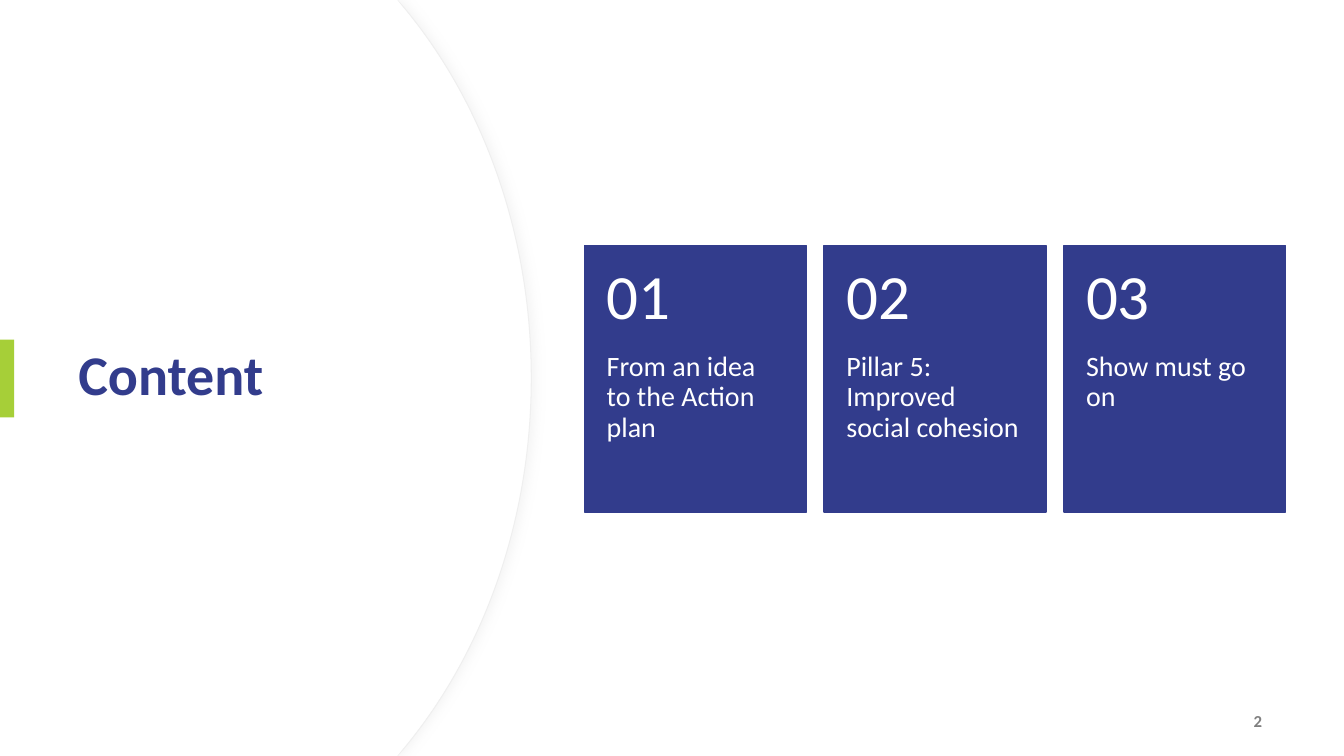
from lxml import etree
from pptx import Presentation
from pptx import util as u
from pptx.dml.color import RGBColor
from pptx.enum import shapes, text
from pptx.oxml import ns

Cm = u.Cm
FONT = "Calibri"
COLOURS = {
    "white": "FFFFFF",
    "navy": "323C8C",
    "green": "A6CF38",
    "grey": "808080",
    "outline": "EFEFEF",
    "shadow": "D9D9D9",
}
TOPICS = [
    "From an idea to the Action plan",
    "Pillar 5: Improved social cohesion",
    "Show must go on",
]
SLIDE_HEIGHT = 19.05
CARD_LEFT, CARD_TOP, CARD_PITCH = 14.73, 6.19, 6.04
CARD_WIDTH, CARD_HEIGHT, NUMBER_HEIGHT = 5.59, 6.71, 2.69


def colour(name):
    return RGBColor.from_string(COLOURS[name])


def style_shape(shape, fill, line=None, width=1):
    shape.shadow.inherit = False
    shape.fill.solid()
    shape.fill.fore_color.rgb = colour(fill)
    if line:
        shape.line.color.rgb = colour(line)
        shape.line.width = u.Pt(width)
    else:
        shape.line.fill.background()


def add_rectangle(parent, left, top, width, height, fill, line=None):
    shape = parent.shapes.add_shape(
        shapes.MSO_SHAPE.RECTANGLE, Cm(left), Cm(top), Cm(width), Cm(height))
    style_shape(shape, fill, line)


def write_text(shape, content, size, colour_name, bold=False, spacing=None):
    frame = shape.text_frame
    frame.word_wrap = True
    frame.text = content
    paragraph = frame.paragraphs[0]
    paragraph.line_spacing = spacing
    font = paragraph.font
    font.name, font.size, font.bold = FONT, u.Pt(size), bold
    font.color.rgb = colour(colour_name)
    return paragraph


def add_text(parent, left, top, width, height, content, size, colour_name,
             anchor=text.MSO_ANCHOR.TOP, insets=(0.25, 0.13, 0.25, 0.13), **style):
    box = parent.shapes.add_textbox(Cm(left), Cm(top), Cm(width), Cm(height))
    frame = box.text_frame
    frame.vertical_anchor = anchor
    (frame.margin_left, frame.margin_top,
     frame.margin_right, frame.margin_bottom) = map(Cm, insets)
    return write_text(box, content, size, colour_name, **style)


def curve_segments(shape, first, count):
    lines = list(shape.element.iter(ns.qn("a:lnTo")))
    for start in range(first, first + 3 * count, 3):
        group = lines[start:start + 3]
        curve = etree.Element(ns.qn("a:cubicBezTo"))
        group[0].addprevious(curve)
        for line in group:
            curve.append(line[0])
            line.getparent().remove(line)


def add_panel(slide, right, line=None):
    upper = [(10.01, 0), (right - 3.2, 0.2), (right - 1.22, 2.59),
             (right, 5.89), (right, SLIDE_HEIGHT / 2)]
    lower = [(x, SLIDE_HEIGHT - y) for x, y in reversed(upper[:-1])]
    outline = upper + lower + [(0, SLIDE_HEIGHT)]
    builder = slide.shapes.build_freeform(0, 0)
    builder.add_line_segments([(Cm(x), Cm(y)) for x, y in outline], close=True)
    panel = builder.convert_to_shape()
    curve_segments(panel, first=2, count=2)
    style_shape(panel, "white", line, 0.75)
    return panel


def add_shadow(shape):
    effects = shape.element.spPr.find(ns.qn("a:effectLst"))
    shadow = etree.SubElement(
        effects, ns.qn("a:outerShdw"), blurRad=str(u.Pt(7)), dist=str(u.Pt(3)),
        dir="0", algn="l", rotWithShape="0")
    tint = etree.SubElement(shadow, ns.qn("a:srgbClr"), val=COLOURS["shadow"])
    etree.SubElement(tint, ns.qn("a:alpha"), val="25000")


def place_title(slide, content):
    title = slide.shapes.title
    title.left, title.top, title.width, title.height = map(Cm, (1.72, 3.23, 10.01, 12.57))
    title.text_frame.vertical_anchor = text.MSO_ANCHOR.MIDDLE
    paragraph = write_text(title, content, 40, "navy", bold=True, spacing=0.9)
    paragraph.alignment = text.PP_ALIGN.LEFT
    title.element.getparent().append(title.element)


def add_card(slide, index, topic):
    left = CARD_LEFT + index * CARD_PITCH
    card = slide.shapes.add_group_shape()
    add_rectangle(card, left, CARD_TOP, CARD_WIDTH, CARD_HEIGHT, "navy", "navy")
    add_text(card, left, CARD_TOP + NUMBER_HEIGHT, CARD_WIDTH,
             CARD_HEIGHT - NUMBER_HEIGHT, topic, 20, "white",
             insets=(0.56, 0, 0.56, 0.91), spacing=0.9)
    add_text(card, left, CARD_TOP, CARD_WIDTH, NUMBER_HEIGHT, f"{index + 1:02}", 45,
             "white", text.MSO_ANCHOR.MIDDLE, (0.56, 0.46, 0.56, 0.46), spacing=0.9)


def main():
    presentation = Presentation()
    presentation.slide_width, presentation.slide_height = Cm(33.87), Cm(SLIDE_HEIGHT)
    slide = presentation.slides.add_slide(presentation.slide_layouts[5])
    add_shadow(add_panel(slide, 13.39, "outline"))
    add_panel(slide, 13.36)
    place_title(slide, "Content")
    add_rectangle(slide, 0, 8.56, 0.36, 1.96, "green")
    number = add_text(slide, 24.44, 17.65, 7.62, 1.02, "2", 12, "grey",
                      text.MSO_ANCHOR.MIDDLE, bold=True)
    number.alignment = text.PP_ALIGN.RIGHT
    for index, topic in enumerate(TOPICS):
        add_card(slide, index, topic)
    presentation.save("out.pptx")


if __name__ == "__main__":
    main()
